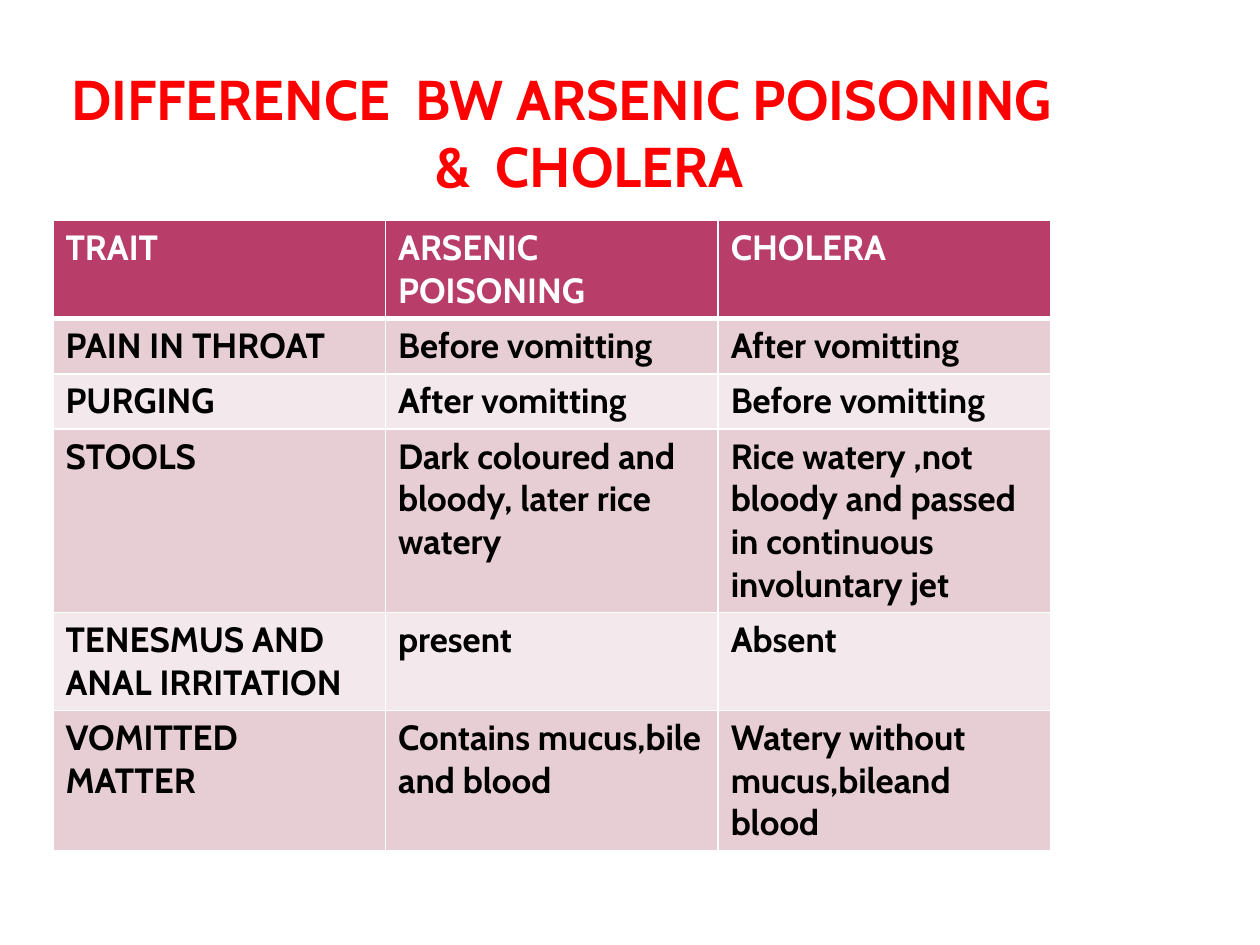
from dataclasses import dataclass

from pptx import Presentation
from pptx.dml.color import RGBColor as Rgb
from pptx.enum.text import MSO_ANCHOR as Anchor, MSO_AUTO_SIZE as AutoSize, PP_ALIGN as Align
from pptx.oxml.ns import qn
from pptx.util import Emu, Inches, Pt
from lxml.etree import SubElement


@dataclass(frozen=True)
class Theme:
    font: str = "Cabin"
    title_size: int = 32
    cell_size: int = 20
    title: str = "FF0000"
    header: str = "B83D68"
    bands: tuple = ("E6CED4", "F3E8EB")
    light: str = "FFFFFF"
    dark: str = "000000"
    rule: float = 1
    header_rule: float = 3


THEME = Theme()
TITLE_LINES = ("DIFFERENCE  BW ARSENIC POISONING", "&  CHOLERA")
TRAITS = (
    ("TRAIT", "ARSENIC POISONING", "CHOLERA"),
    ("PAIN IN THROAT", "Before vomitting", "After vomitting"),
    ("PURGING", "After vomitting", "Before vomitting"),
    ("STOOLS", "Dark coloured and bloody, later rice watery",
     "Rice watery ,not bloody and passed in continuous involuntary jet"),
    ("TENESMUS AND ANAL IRRITATION", "present", "Absent"),
    ("VOMITTED MATTER", "Contains mucus,bile and blood",
     "Watery without mucus,bileand blood"),
)
COLUMN = Inches(2.64)
ROW = Inches(0.41)
LAST_ROW = Inches(0.69)
TABLE_WIDTH = COLUMN * len(TRAITS[0])


def add_span(para, text, size, color):
    span = para.add_run()
    span.text = text
    font = span.font
    font.name, font.size, font.bold = THEME.font, Pt(size), True
    font.color.rgb = Rgb.from_string(color)


def add_title(page):
    box = page.shapes.title
    box.left, box.top = Inches(0.5), Inches(0.33)
    box.width, box.height = TABLE_WIDTH, Inches(1.25)
    frame = box.text_frame
    frame.auto_size = AutoSize.NONE
    frame.word_wrap = True
    frame.vertical_anchor = Anchor.BOTTOM
    frame.margin_left = frame.margin_right = Inches(0.05)
    frame.margin_top = frame.margin_bottom = 0
    para = frame.paragraphs[0]
    para.alignment = Align.CENTER
    hanging = Inches(0.44)
    props = para._p.get_or_add_pPr()
    props.set("marL", str(hanging))
    props.set("indent", str(-hanging))
    first, second = TITLE_LINES
    add_span(para, first, THEME.title_size, THEME.title)
    para.add_line_break()
    add_span(para, second, THEME.title_size, THEME.title)


def add_borders(cell, bottom):
    props = cell._tc.get_or_add_tcPr()
    widths = {"L": THEME.rule, "R": THEME.rule, "T": THEME.rule, "B": bottom}
    for side, width in widths.items():
        line = SubElement(props, qn(f"a:ln{side}"), w=str(Pt(width)))
        fill = SubElement(line, qn("a:solidFill"))
        SubElement(fill, qn("a:srgbClr"), val=THEME.light)


def fill_cell(cell, text, fill, color, bottom):
    add_borders(cell, bottom)
    cell.fill.solid()
    cell.fill.fore_color.rgb = Rgb.from_string(fill)
    add_span(cell.text_frame.paragraphs[0], text, THEME.cell_size, color)


def add_trait_table(page):
    rows, columns = len(TRAITS), len(TRAITS[0])
    holder = page.shapes.add_table(rows, columns, Inches(0.42), Inches(1.75),
                                   TABLE_WIDTH, Emu(ROW * rows))
    table = holder.table
    for column in table.columns:
        column.width = COLUMN
    for index, texts in enumerate(TRAITS):
        table.rows[index].height = LAST_ROW if index == rows - 1 else ROW
        if index == 0:
            style = THEME.header, THEME.light, THEME.header_rule
        else:
            style = THEME.bands[(index - 1) % 2], THEME.dark, THEME.rule
        for column, text in enumerate(texts):
            fill_cell(table.cell(index, column), text, *style)
    holder.height = Inches(4.93)


def main():
    deck = Presentation()
    deck.slide_width, deck.slide_height = Inches(10), Inches(7.5)
    page = deck.slides.add_slide(deck.slide_layouts.get_by_name("Title Only"))
    add_title(page)
    add_trait_table(page)
    deck.save("out.pptx")


if __name__ == "__main__":
    main()
